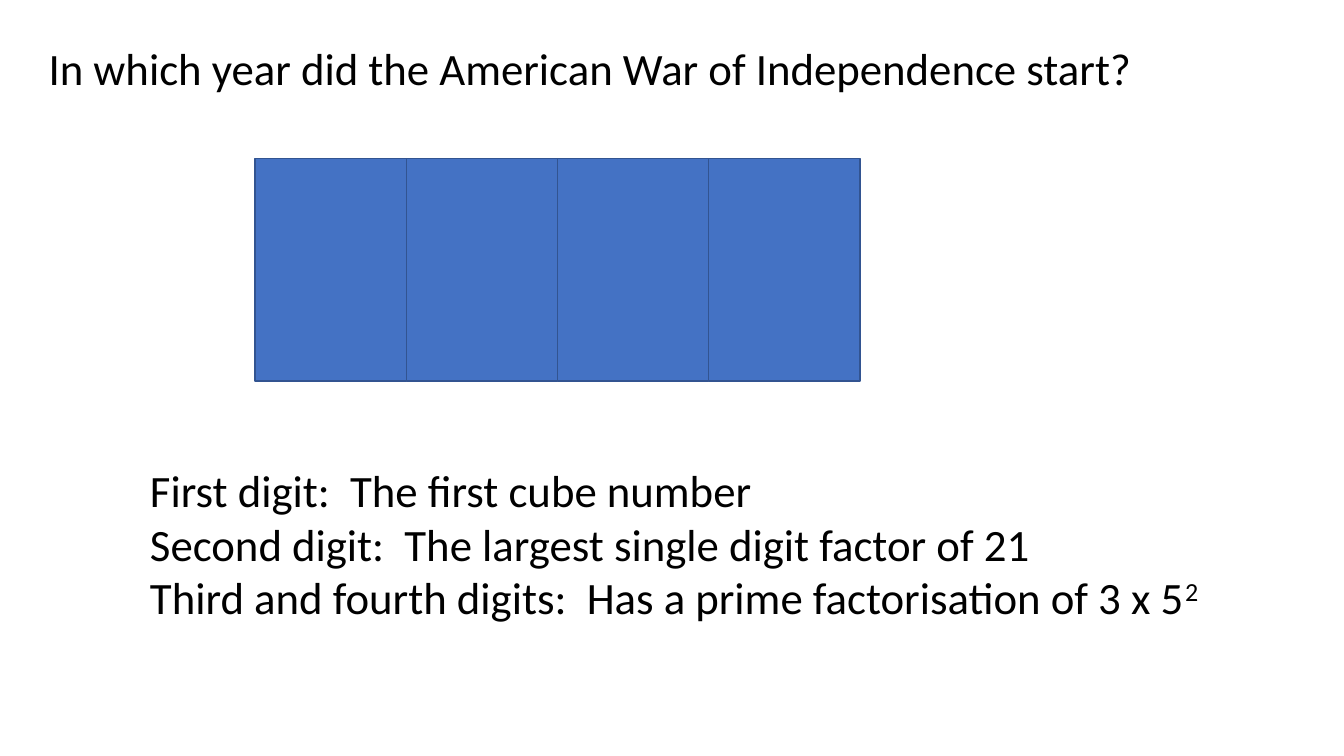
from dataclasses import dataclass

import pptx
import pptx.dml.color
import pptx.enum.shapes
import pptx.enum.text
import pptx.util
from pptx.util import Cm


@dataclass(frozen=True)
class Passage:
    left: float
    top: float
    width: float
    height: float
    lines: tuple[str, ...]


QUESTION = Passage(0.97, 0.91, 30.23, 1.63, (
    "In which year did the American War of Independence start?",
))
CLUES = Passage(3.53, 11.53, 28.04, 4.37, (
    "First digit:  The first cube number",
    "Second digit:  The largest single digit factor of 21",
    "Third and fourth digits:  Has a prime factorisation of 3 x 5^2",
))
DIGIT_COUNT = 4
DIGIT_LEFT, DIGIT_TOP, DIGIT_WIDTH, DIGIT_HEIGHT = 6.43, 3.99, 3.81, 5.61


def colour(code: str) -> pptx.dml.color.RGBColor:
    return pptx.dml.color.RGBColor.from_string(code)


def write_passage(holder, passage: Passage) -> None:
    place = {
        "left": Cm(passage.left),
        "top": Cm(passage.top),
        "width": Cm(passage.width),
        "height": Cm(passage.height),
    }
    for name, value in place.items():
        setattr(holder, name, value)
    frame = holder.text_frame
    layout = {
        "word_wrap": True,
        "auto_size": pptx.enum.text.MSO_AUTO_SIZE.SHAPE_TO_FIT_TEXT,
        "vertical_anchor": pptx.enum.text.MSO_ANCHOR.TOP,
    }
    for name, value in layout.items():
        setattr(frame, name, value)
    for index, line in enumerate(passage.lines):
        paragraph = frame.add_paragraph() if index else frame.paragraphs[0]
        paragraph.alignment = pptx.enum.text.PP_ALIGN.LEFT
        paragraph.line_spacing = 1.0
        base, _, power = line.partition("^")
        for text, baseline in ((base, None), (power, "30000")):
            if not text:
                continue
            run = paragraph.add_run()
            run.text = text
            for name, value in {"name": "Calibri", "size": pptx.util.Pt(32)}.items():
                setattr(run.font, name, value)
            run.font.color.rgb = colour("000000")
            if baseline:
                run._r.get_or_add_rPr().set("baseline", baseline)


def draw_digit_box(slide, position: int) -> None:
    digit_box = slide.shapes.add_shape(
        pptx.enum.shapes.MSO_SHAPE.RECTANGLE,
        Cm(DIGIT_LEFT + position * DIGIT_WIDTH), Cm(DIGIT_TOP),
        Cm(DIGIT_WIDTH), Cm(DIGIT_HEIGHT),
    )
    digit_box.shadow.inherit = False
    digit_box.fill.solid()
    digit_box.fill.fore_color.rgb = colour("4472C4")
    digit_box.line.color.rgb = colour("325491")
    digit_box.line.width = pptx.util.Pt(1)


def main() -> None:
    deck = pptx.Presentation()
    deck.slide_width, deck.slide_height = Cm(33.87), Cm(19.05)
    slide = deck.slides.add_slide(deck.slide_layouts.get_by_name("Title Only"))
    write_passage(slide.shapes.title, QUESTION)
    for position in range(DIGIT_COUNT):
        draw_digit_box(slide, position)
    write_passage(slide.shapes.add_textbox(0, 0, 0, 0), CLUES)
    deck.save("out.pptx")


if __name__ == "__main__":
    main()
